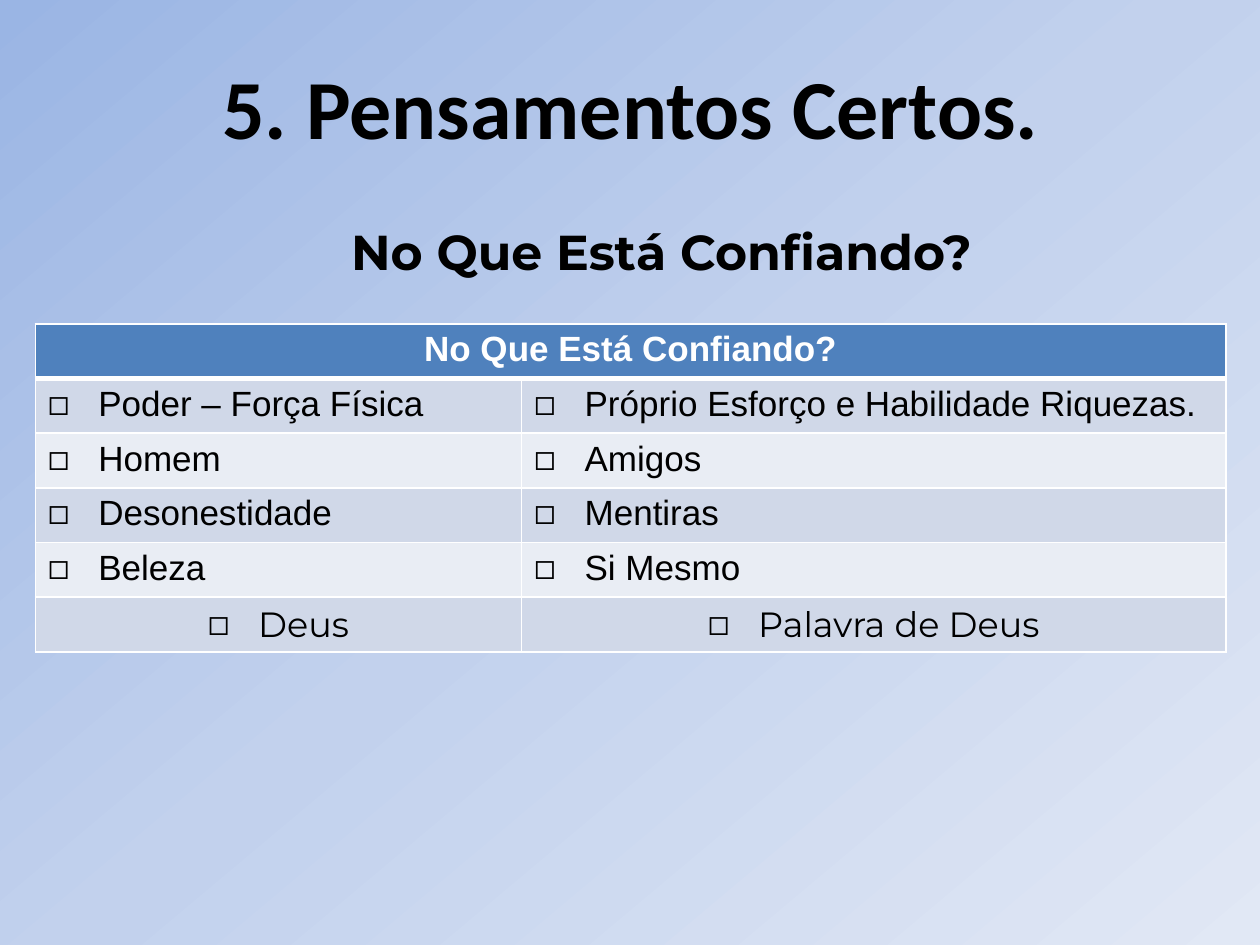
from lxml.etree import SubElement
from pptx import Presentation
from pptx.dml.color import RGBColor
from pptx.enum.text import MSO_ANCHOR, PP_ALIGN
from pptx.oxml.ns import qn
from pptx.util import Inches, Pt

ROWS = [
    ("Poder – Força Física", "Próprio Esforço e Habilidade Riquezas."),
    ("Homem", "Amigos"),
    ("Desonestidade", "Mentiras"),
    ("Beleza", "Si Mesmo"),
    ("Deus", "Palavra de Deus"),
]


def color(code):
    return RGBColor.from_string(code)


class Deck:
    black, white = "000000", "FFFFFF"
    head, bands = "4F81BD", ("D0D8E8", "E9EDF4")
    indent = Inches(0.4)

    def __init__(self, show):
        self.slide = show.slides.add_slide(show.slide_layouts[6])

    def ground(self, stops, angle):
        fill = self.slide.background.fill
        fill.gradient()
        # The public angle runs counter-clockwise.
        fill.gradient_angle = 360 - angle
        grad = self.slide.element.find(".//" + qn("a:gsLst"))
        grad.clear()
        for place, code in stops:
            stop = SubElement(grad, qn("a:gs"), pos=str(place * 1000))
            SubElement(stop, qn("a:srgbClr"), val=code)

    def run(self, para, text, size, font, code, bold=False, align=PP_ALIGN.CENTER):
        para.alignment = align
        run = para.add_run()
        run.text = text
        run.font.size = Pt(size)
        run.font.name = font
        run.font.bold = bold
        run.font.color.rgb = color(code)

    def text(self, left, top, width, height, text, size, font, anchor):
        box = self.slide.shapes.add_textbox(
            Inches(left), Inches(top), Inches(width), Inches(height))
        frame = box.text_frame
        frame.word_wrap = True
        frame.vertical_anchor = anchor
        self.run(frame.paragraphs[0], text, size, font, self.black, bold=True)

    def bullet(self, para):
        props = para._p.get_or_add_pPr()
        props.set("marL", str(self.indent))
        props.set("indent", str(-self.indent))
        SubElement(props, qn("a:buFont"), typeface="Arial")
        SubElement(props, qn("a:buChar"), char="◻")

    def paint(self, cell, code, base=1):
        """Give a cell white borders, its lower one base points wide, and a fill."""
        props = cell._tc.get_or_add_tcPr()
        for side, width in (("L", 1), ("R", 1), ("T", 1), ("B", base)):
            line = SubElement(props, qn(f"a:ln{side}"), w=str(Pt(width)))
            fill = SubElement(line, qn("a:solidFill"))
            SubElement(fill, qn("a:srgbClr"), val=self.white)
        cell.fill.solid()
        cell.fill.fore_color.rgb = color(code)

    def table(self, left, top, widths, height, title, rows):
        count = len(rows) + 1
        grid = self.slide.shapes.add_table(
            count, len(widths), Inches(left), Inches(top),
            Inches(sum(widths)), Inches(height * count)).table
        for col, width in zip(grid.columns, widths):
            col.width = Inches(width)
        for row in grid.rows:
            row.height = Inches(height)

        first = grid.cell(0, 0)
        first.merge(grid.cell(0, len(widths) - 1))
        for cell in grid.rows[0].cells:
            self.paint(cell, self.head, base=3)
        self.run(first.text_frame.paragraphs[0], title, 20, "Arial",
                 self.white, bold=True)

        for r, words in enumerate(rows, 1):
            last = r == len(rows)
            font = "Montserrat" if last else "Arial"
            align = PP_ALIGN.CENTER if last else PP_ALIGN.LEFT
            for c, word in enumerate(words):
                cell = grid.cell(r, c)
                self.paint(cell, self.bands[(r - 1) % 2])
                para = cell.text_frame.paragraphs[0]
                self.bullet(para)
                self.run(para, word, 20, font, self.black, align=align)


def main():
    show = Presentation()
    show.slide_width, show.slide_height = Inches(10), Inches(7.5)
    deck = Deck(show)
    deck.ground([(0, "9AB5E4"), (50, "C2D1ED"), (100, "E1E8F5")], 50)
    deck.text(0.28, 0.38, 9.45, 0.93, "5. Pensamentos Certos.", 48,
              "Calibri", MSO_ANCHOR.MIDDLE)
    deck.text(0.78, 1.71, 8.94, 0.6, "No Que Está Confiando?", 28,
              "Montserrat", MSO_ANCHOR.TOP)
    deck.table(0.28, 2.57, (3.86, 5.59), 0.41, "No Que Está Confiando?", ROWS)
    show.save("out.pptx")


if __name__ == "__main__":
    main()
